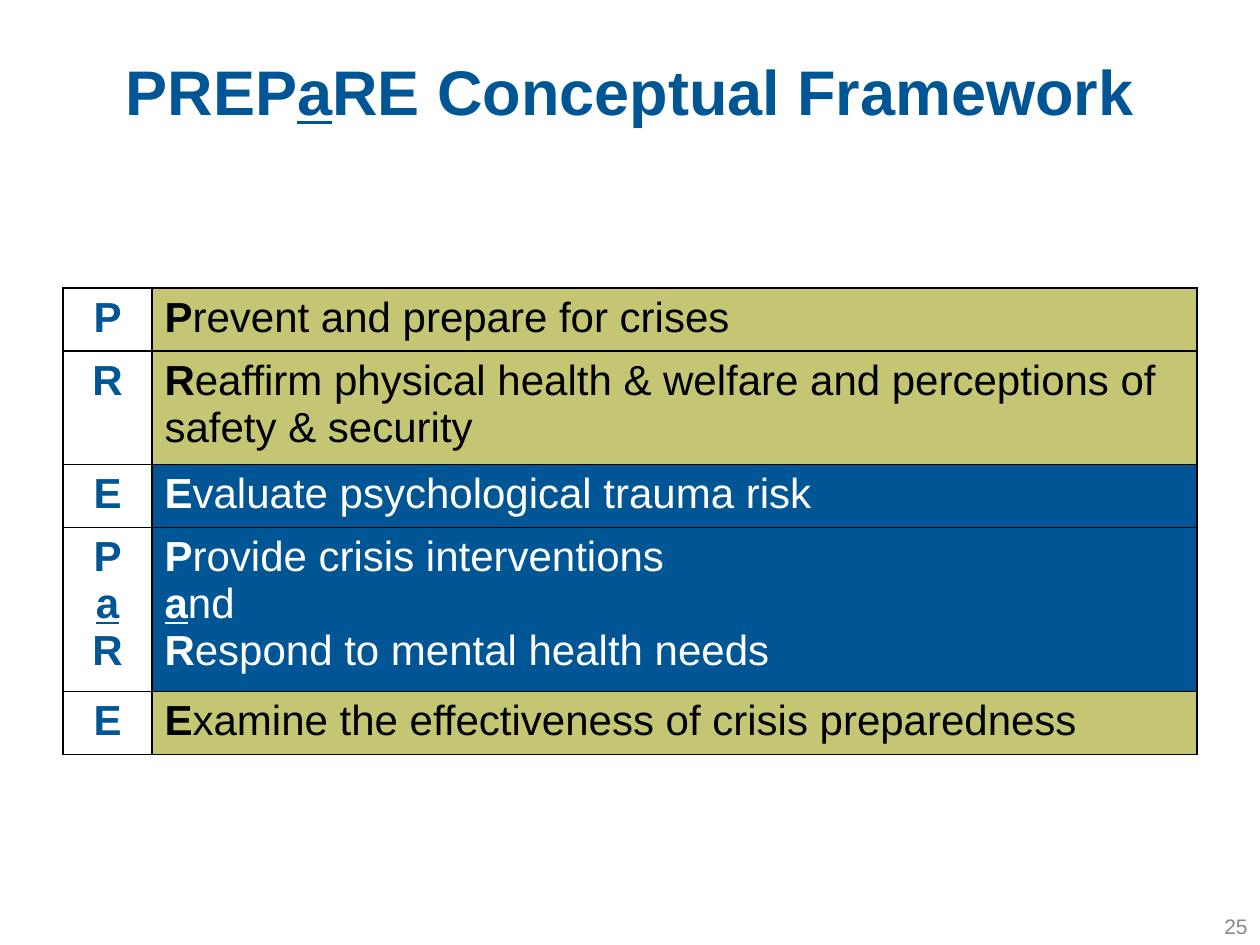
from lxml import etree
from pptx import Presentation
from pptx import util as u
from pptx.dml.color import RGBColor
from pptx.enum import text
from pptx.oxml.ns import qn

BLUE, OLIVE, BLACK, WHITE, GREY = "005695", "C4C673", "000000", "FFFFFF", "888888"
TITLE = [("PREP", False), ("a", True), ("RE Conceptual Framework", False)]
PAGE = "25"
STEPS = [
    (["Prevent and prepare for crises"], OLIVE, BLACK),
    (["Reaffirm physical health & welfare and perceptions of safety & security"], OLIVE, BLACK),
    (["Evaluate psychological trauma risk"], BLUE, WHITE),
    (["Provide crisis interventions", "and", "Respond to mental health needs"], BLUE, WHITE),
    (["Examine the effectiveness of crisis preparedness"], OLIVE, BLACK),
]
LINE_COUNTS = [1, 2, 1, 3, 1]
LINE_H, CELL_PAD = 47, 12
COLS = [89, 1045]
CENTER, LEFT, RIGHT = text.PP_ALIGN.CENTER, text.PP_ALIGN.LEFT, text.PP_ALIGN.RIGHT


def px(n):
    return u.Emu(n * 914400 // 126)


def color(value):
    return RGBColor.from_string(value)


def style(p, size, value, align, bold=None):
    p.alignment = align
    p.font.name, p.font.size, p.font.bold = "Arial", u.Pt(size), bold
    p.font.color.rgb = color(value)


def add_run(p, words, underline=False, bold=None):
    r = p.add_run()
    r.text = words
    if bold is not None:
        r.font.bold = bold
    if underline:
        r.font.underline = True


def add_box(slide, x, y, w, h):
    tf = slide.shapes.add_textbox(px(x), px(y), px(w), px(h)).text_frame
    tf.word_wrap = True
    tf.vertical_anchor = text.MSO_ANCHOR.MIDDLE
    return tf.paragraphs[0]


def add_borders(cell):
    tc_pr = cell._tc.get_or_add_tcPr()
    for i, side in enumerate(("lnL", "lnR", "lnT", "lnB")):
        ln = etree.Element(qn("a:" + side), w=str(u.Pt(1)))
        fill = etree.SubElement(ln, qn("a:solidFill"))
        etree.SubElement(fill, qn("a:srgbClr"), val=BLACK)
        tc_pr.insert(i, ln)


def cell_paragraph(cell, i):
    tf = cell.text_frame
    return tf.paragraphs[0] if i == 0 else tf.add_paragraph()


prs = Presentation()
prs.slide_width, prs.slide_height = px(1260), px(945)
slide = prs.slides.add_slide(prs.slide_layouts[6])

p = add_box(slide, 63, 28, 1134, 125)
style(p, 36, BLUE, CENTER, True)
for words, underline in TITLE:
    add_run(p, words, underline)

p = add_box(slide, 966, 901, 294, 50)
style(p, 12, GREY, RIGHT)
add_run(p, PAGE)

heights = [LINE_H * n + CELL_PAD for n in LINE_COUNTS]
table = slide.shapes.add_table(
    len(STEPS), 2, px(63), px(288), px(sum(COLS)), px(sum(heights))).table
table.first_row = table.horz_banding = False
for col, width in zip(table.columns, COLS):
    col.width = px(width)

for row, height, (lines, fill, ink) in zip(table.rows, heights, STEPS):
    row.height = px(height)
    key, body = row.cells
    key.fill.background()
    body.fill.solid()
    body.fill.fore_color.rgb = color(fill)
    for cell in (key, body):
        add_borders(cell)
    for i, line in enumerate(lines):
        initial, rest = line[0], line[1:]
        p = cell_paragraph(key, i)
        style(p, 24, BLUE, CENTER, True)
        add_run(p, initial, initial == "a")
        p = cell_paragraph(body, i)
        style(p, 24, ink, LEFT)
        add_run(p, initial, initial == "a", True)
        add_run(p, rest, bold=False)

prs.save("out.pptx")
